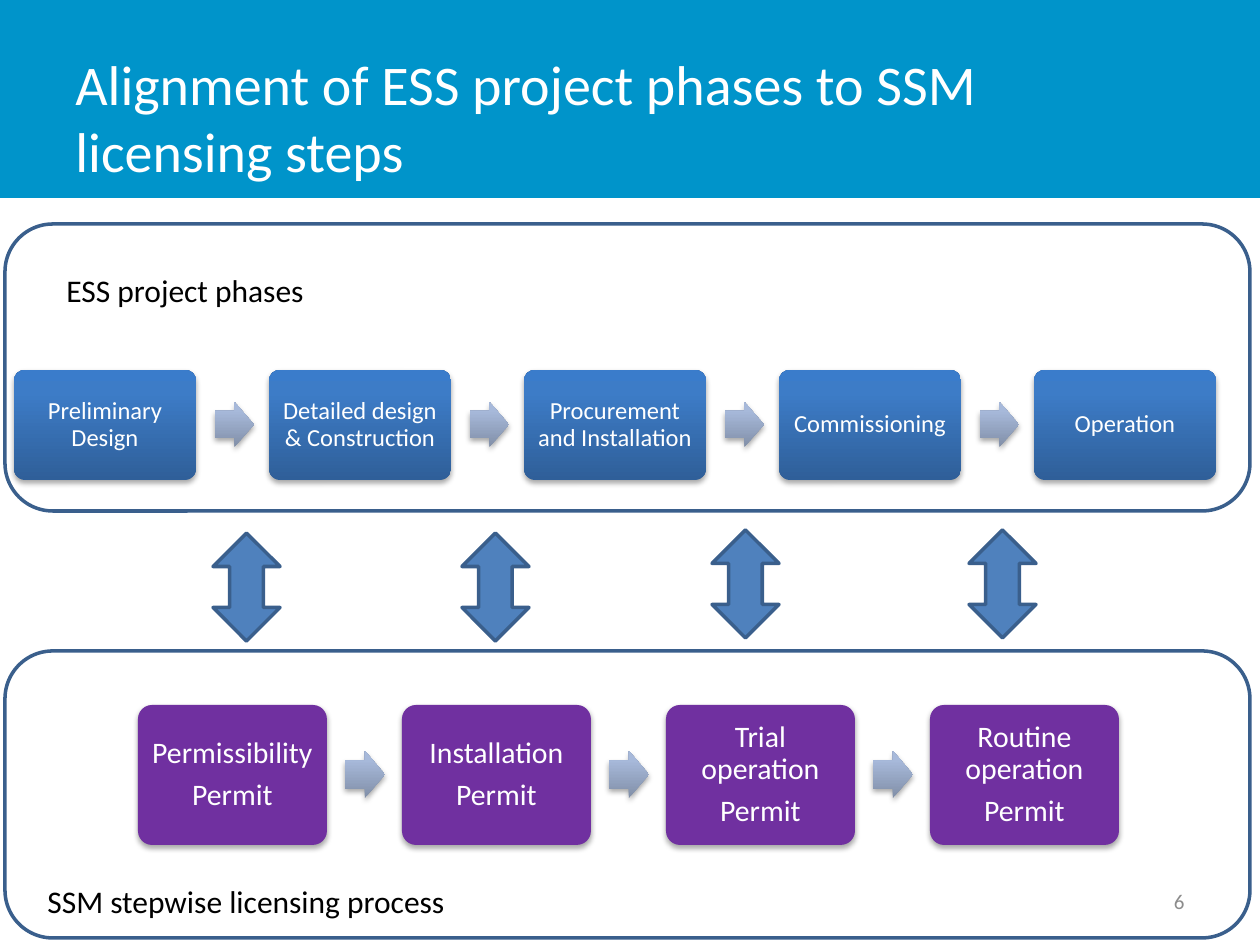
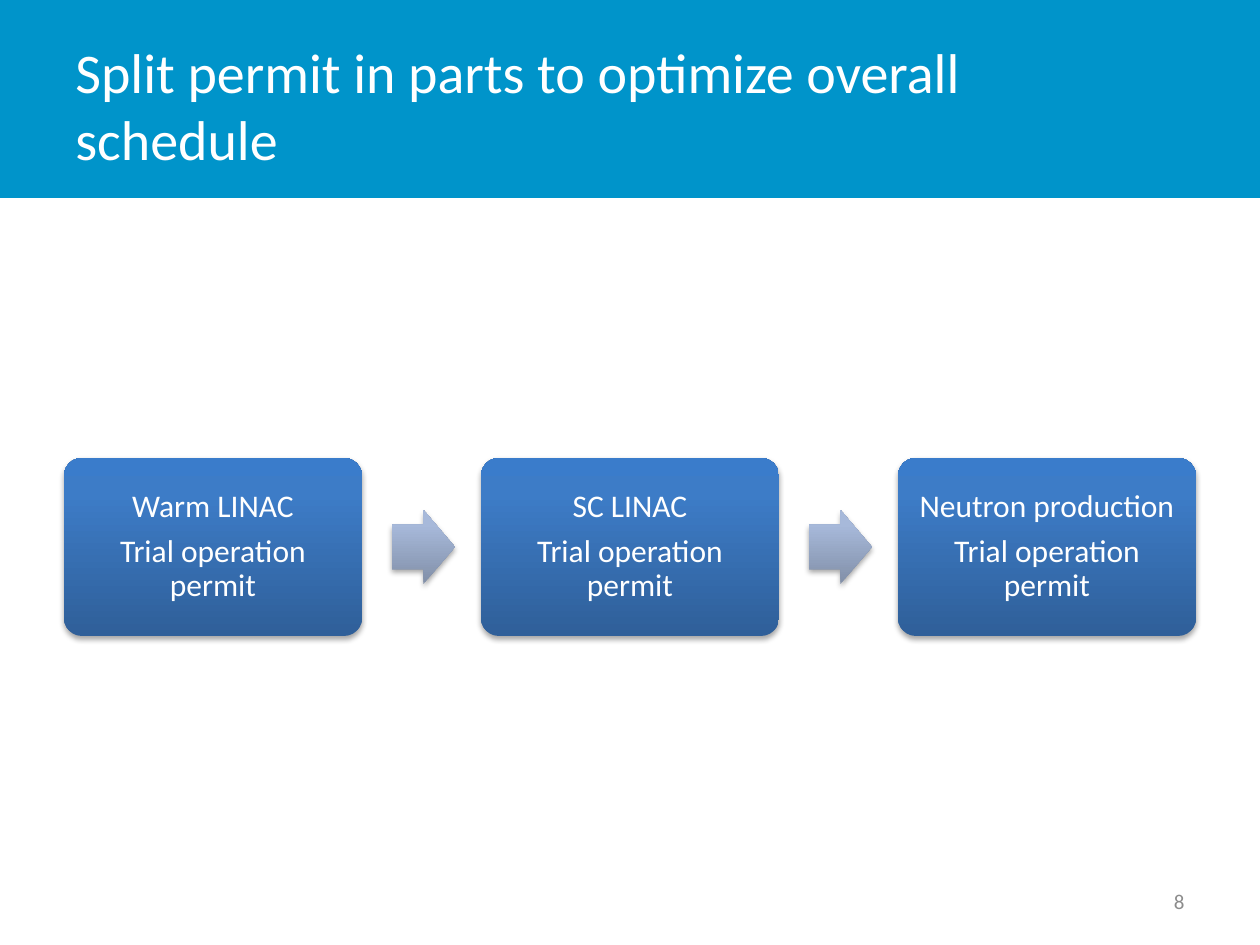
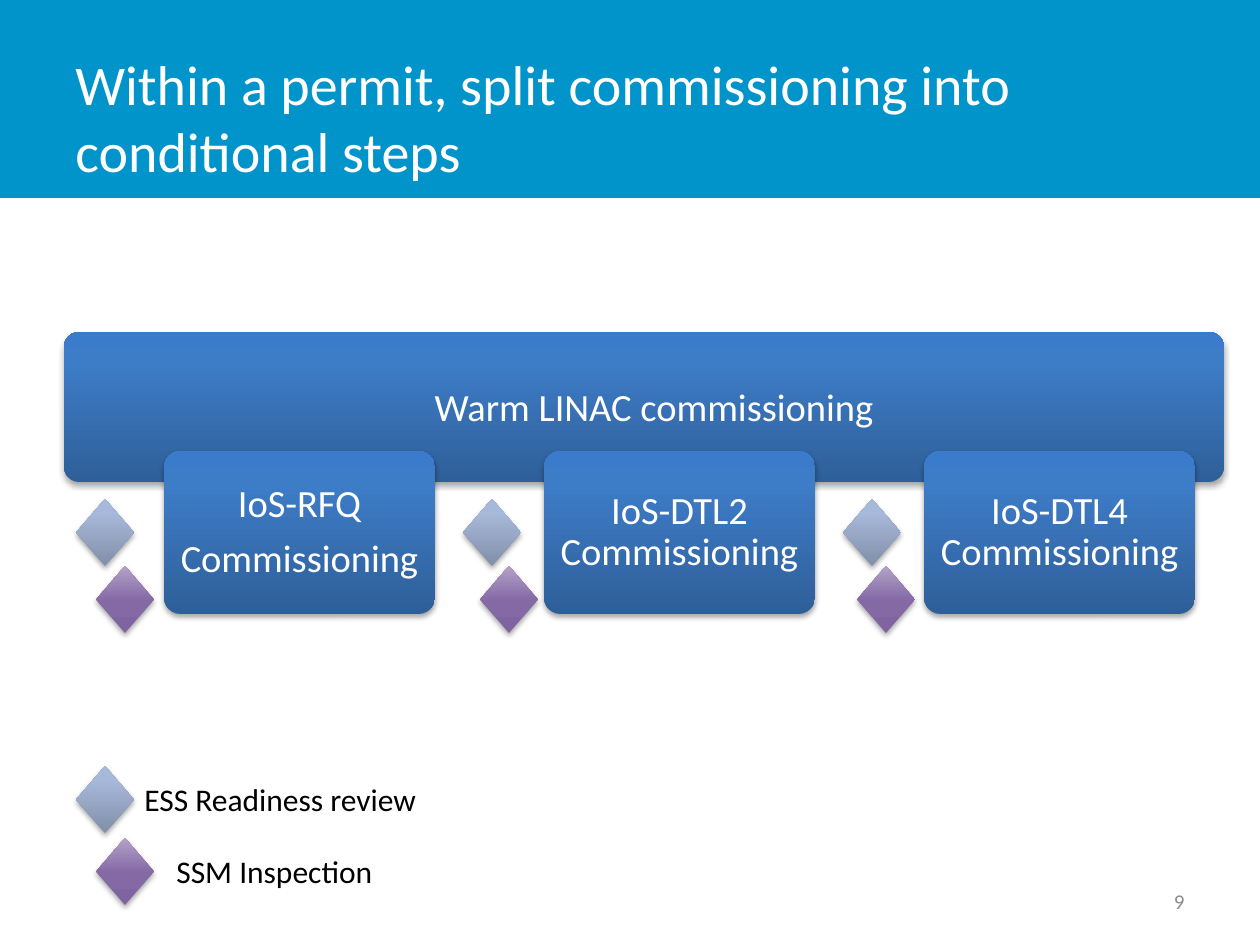
from lxml import etree
from pptx import Presentation
from pptx.dml.color import RGBColor
from pptx.enum import shapes, text
from pptx.oxml.ns import qn
from pptx.util import Pt

PX = 914400 / 126
FONT = "Calibri"
KIND = shapes.MSO_SHAPE
ALIGN = text.PP_ALIGN
MIDDLE = text.MSO_ANCHOR.MIDDLE

BAND_BLUE = RGBColor(0x00, 0x94, 0xCA)
OUTLINE_BLUE = RGBColor(0x3A, 0x5F, 0x8C)
ARROW_BLUE = RGBColor(0x4F, 0x81, 0xBD)
PERMIT_PURPLE = RGBColor(0x70, 0x30, 0xA0)
NUMBER_GRAY = RGBColor(0x8C, 0x8C, 0x8C)
WHITE = RGBColor(0xFF, 0xFF, 0xFF)
BLACK = RGBColor(0x00, 0x00, 0x00)

# Gradients run from bottom to top: (percent, colour)
CARD_BLUE = ((0, RGBColor(0x2F, 0x5F, 0x99)), (80, RGBColor(0x3D, 0x7C, 0xC7)),
             (100, RGBColor(0x3A, 0x7C, 0xCB)))
PALE_BLUE = ((0, RGBColor(0x81, 0x8F, 0xA8)), (80, RGBColor(0xA7, 0xB9, 0xDA)),
             (100, RGBColor(0xA7, 0xBA, 0xDC)))
MAUVE = ((0, RGBColor(0x80, 0x64, 0xA2)), (48, RGBColor(0x84, 0x69, 0xA5)),
         (100, RGBColor(0xB3, 0xA2, 0xC7)))

DIAMOND = (58, 67)


def emu(*lengths):
    return [round(length * PX) for length in lengths]


def write(shape, content, size=18, color=BLACK, align=ALIGN.LEFT, anchor=MIDDLE,
          wrap=True, insets=None, line_spacing=None, space_after=0):
    """Fill a shape with text; insets are left, top, right, bottom in px."""
    frame = shape.text_frame
    frame.word_wrap = wrap
    frame.vertical_anchor = anchor
    if insets:
        (frame.margin_left, frame.margin_top,
         frame.margin_right, frame.margin_bottom) = emu(*insets)
    frame.text = content
    for paragraph in frame.paragraphs:
        paragraph.alignment = align
        paragraph.line_spacing = line_spacing
        paragraph.space_after = Pt(space_after)
        paragraph.font.name = FONT
        paragraph.font.size = Pt(size)
        paragraph.font.color.rgb = color


def add_text(slide, box, content, **style):
    write(slide.shapes.add_textbox(*emu(*box)), content, **style)


def add_label(slide, box, content):
    add_text(slide, box, content, wrap=False, anchor=text.MSO_ANCHOR.TOP)


def paint_gradient(shape, stops):
    shape.fill.gradient()
    shape.fill.gradient_angle = 90
    stop_list = shape._element.spPr.find(".//" + qn("a:gsLst"))
    for stop in list(stop_list):
        stop_list.remove(stop)
    for percent, color in stops:
        stop = etree.SubElement(stop_list, qn("a:gs"), pos=str(percent * 1000))
        etree.SubElement(stop, qn("a:srgbClr"), val=str(color))


def cast_shadow(shape):
    effects = shape._element.spPr.find(qn("a:effectLst"))
    shadow = etree.SubElement(effects, qn("a:outerShdw"), blurRad="40000",
                              dist="23000", dir="5400000", rotWithShape="0")
    color = etree.SubElement(shadow, qn("a:srgbClr"), val=str(BLACK))
    etree.SubElement(color, qn("a:alpha"), val="35000")


def add_figure(slide, kind, box, fill, outline=None, adjustments=(), shadow=False):
    figure = slide.shapes.add_shape(kind, *emu(*box))
    figure.shadow.inherit = False
    for index, value in enumerate(adjustments):
        figure.adjustments[index] = value
    if isinstance(fill, RGBColor):
        figure.fill.solid()
        figure.fill.fore_color.rgb = fill
    else:
        paint_gradient(figure, fill)
    if outline is None:
        figure.line.fill.background()
    else:
        figure.line.color.rgb = outline
        figure.line.width = Pt(2)
    if shadow:
        cast_shadow(figure)
    return figure


def add_card(slide, box, content, size, fill=CARD_BLUE, insets=(8, 8, 8, 8)):
    card = add_figure(slide, KIND.ROUNDED_RECTANGLE, box, fill,
                      adjustments=[0.1], shadow=True)
    write(card, content, size=size, color=WHITE, align=ALIGN.CENTER,
          insets=insets, line_spacing=0.9, space_after=round(size * 0.35, 2))


def add_arrow(slide, box):
    add_figure(slide, KIND.RIGHT_ARROW, box, PALE_BLUE,
               adjustments=[0.6, 0.5], shadow=True)


def add_diamond(slide, left, top, fill):
    add_figure(slide, KIND.DIAMOND, (left, top, *DIAMOND), fill, shadow=True)


def add_flow(slide, steps, first, pitch, size, arrow, arrow_offset, **style):
    """Row of cards, with an arrow centred on the row's height between each two."""
    left, top, width, height = first
    arrow_width, arrow_height = arrow
    for index, step in enumerate(steps):
        x = left + index * pitch
        add_card(slide, (x, top, width, height), step, size, **style)
        if index < len(steps) - 1:
            add_arrow(slide, (x + arrow_offset, top + (height - arrow_height) // 2,
                              arrow_width, arrow_height))


def add_slide(deck, title, number, title_top=38):
    slide = deck.slides.add_slide(deck.slide_layouts[6])
    add_figure(slide, KIND.RECTANGLE, (0, 0, 1260, 198), BAND_BLUE)
    add_text(slide, (63, title_top, 984, 157), title, size=32, color=WHITE)
    add_text(slide, (903, 876, 294, 50), number, size=12, color=NUMBER_GRAY,
             align=ALIGN.RIGHT)
    return slide


def add_alignment_slide(deck):
    slide = add_slide(deck, "Alignment of ESS project phases to SSM licensing steps", "6")
    for top in (651, 224):
        frame = add_figure(slide, KIND.ROUNDED_RECTANGLE, (5, top, 1245, 287),
                           WHITE, OUTLINE_BLUE)
        frame.fill.background()
    add_flow(slide, ["Permissibility\nPermit", "Installation\nPermit",
                     "Trial operation\nPermit", "Routine operation\nPermit"],
             first=(138, 705, 189, 140), pitch=264, size=17,
             arrow=(40, 47), arrow_offset=207, fill=PERMIT_PURPLE)
    add_flow(slide, ["Preliminary Design", "Detailed design & Construction",
                     "Procurement and Installation", "Commissioning", "Operation"],
             first=(14, 370, 182, 110), pitch=255, size=14,
             arrow=(39, 45), arrow_offset=201)
    for left, top in ((213, 533), (462, 533), (712, 530), (969, 530)):
        add_figure(slide, KIND.UP_DOWN_ARROW, (left, top, 67, 108),
                   ARROW_BLUE, OUTLINE_BLUE)
    add_label(slide, (54, 265, 266, 50), "ESS project phases")
    add_label(slide, (35, 876, 427, 50), "SSM stepwise licensing process")


def add_split_slide(deck):
    slide = add_slide(deck, "Split permit in parts to optimize overall schedule", "8",
                      title_top=26)
    parts = ["Warm LINAC", "SC LINAC", "Neutron production"]
    add_flow(slide, [f"{part}\nTrial operation permit" for part in parts],
             first=(64, 458, 298, 178), pitch=417, size=18,
             arrow=(63, 74), arrow_offset=328)


def add_steps_slide(deck):
    slide = add_slide(deck, "Within a permit, split commissioning into conditional steps", "9")
    add_card(slide, (64, 332, 1160, 150), "Warm LINAC commissioning", 22,
             insets=(30, 14, 10, 10))
    stages = ["IoS-RFQ\nCommissioning", "IoS-DTL2 Commissioning",
              "IoS-DTL4 Commissioning"]
    for index, stage in enumerate(stages):
        add_card(slide, (164 + index * 380, 451, 271, 163), stage, 22,
                 insets=(10, 10, 10, 10))
    for left in (76, 463, 843):
        add_diamond(slide, left, 499, PALE_BLUE)
    for left in (96, 480, 857):
        add_diamond(slide, left, 566, MAUVE)
    add_diamond(slide, 76, 766, PALE_BLUE)
    add_label(slide, (132, 774, 300, 50), "ESS Readiness review")
    add_diamond(slide, 96, 838, MAUVE)
    add_label(slide, (164, 846, 224, 50), "SSM Inspection")


def main():
    deck = Presentation()
    deck.slide_width, deck.slide_height = emu(1260, 945)
    add_alignment_slide(deck)
    add_split_slide(deck)
    add_steps_slide(deck)
    deck.save("out.pptx")


if __name__ == "__main__":
    main()
